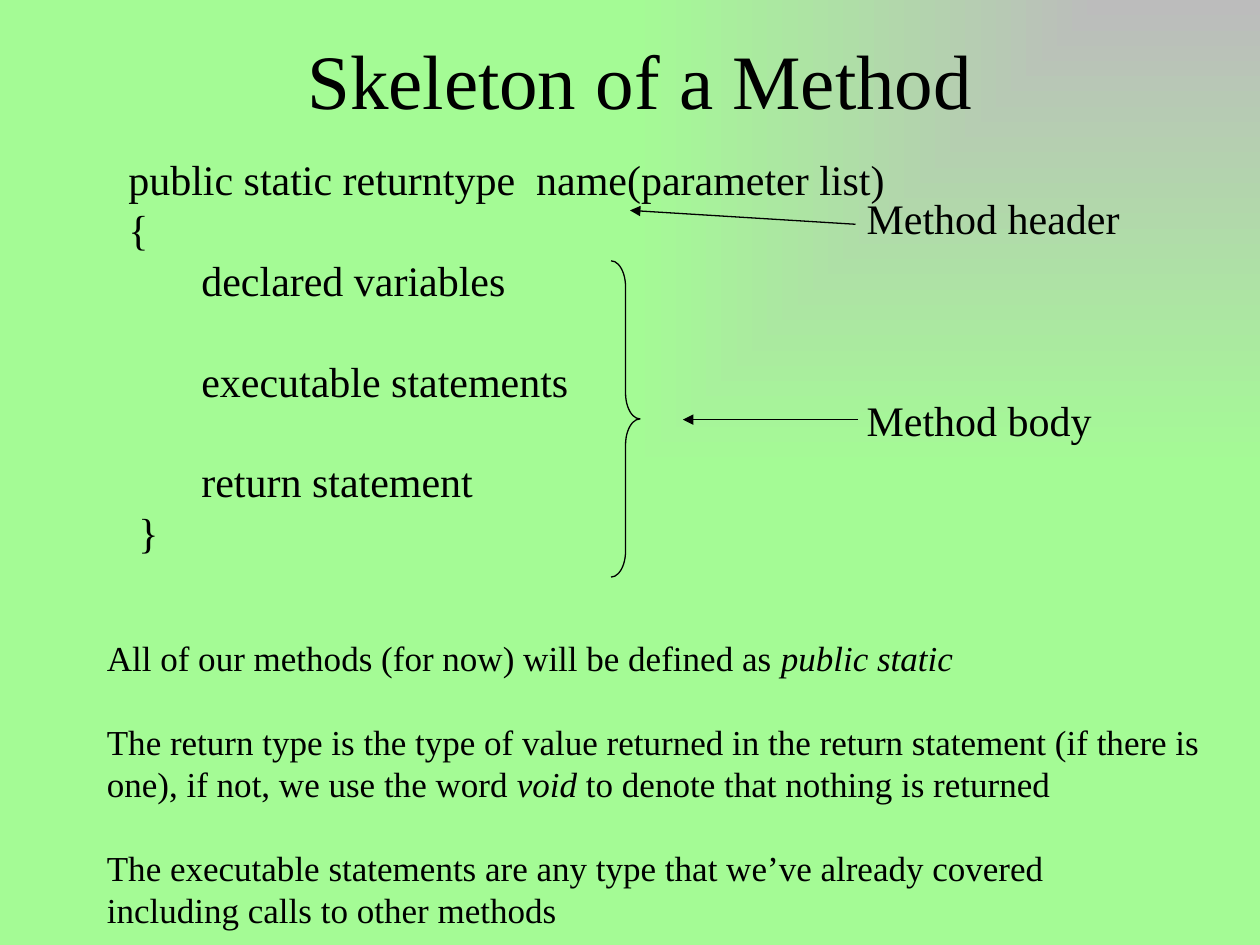
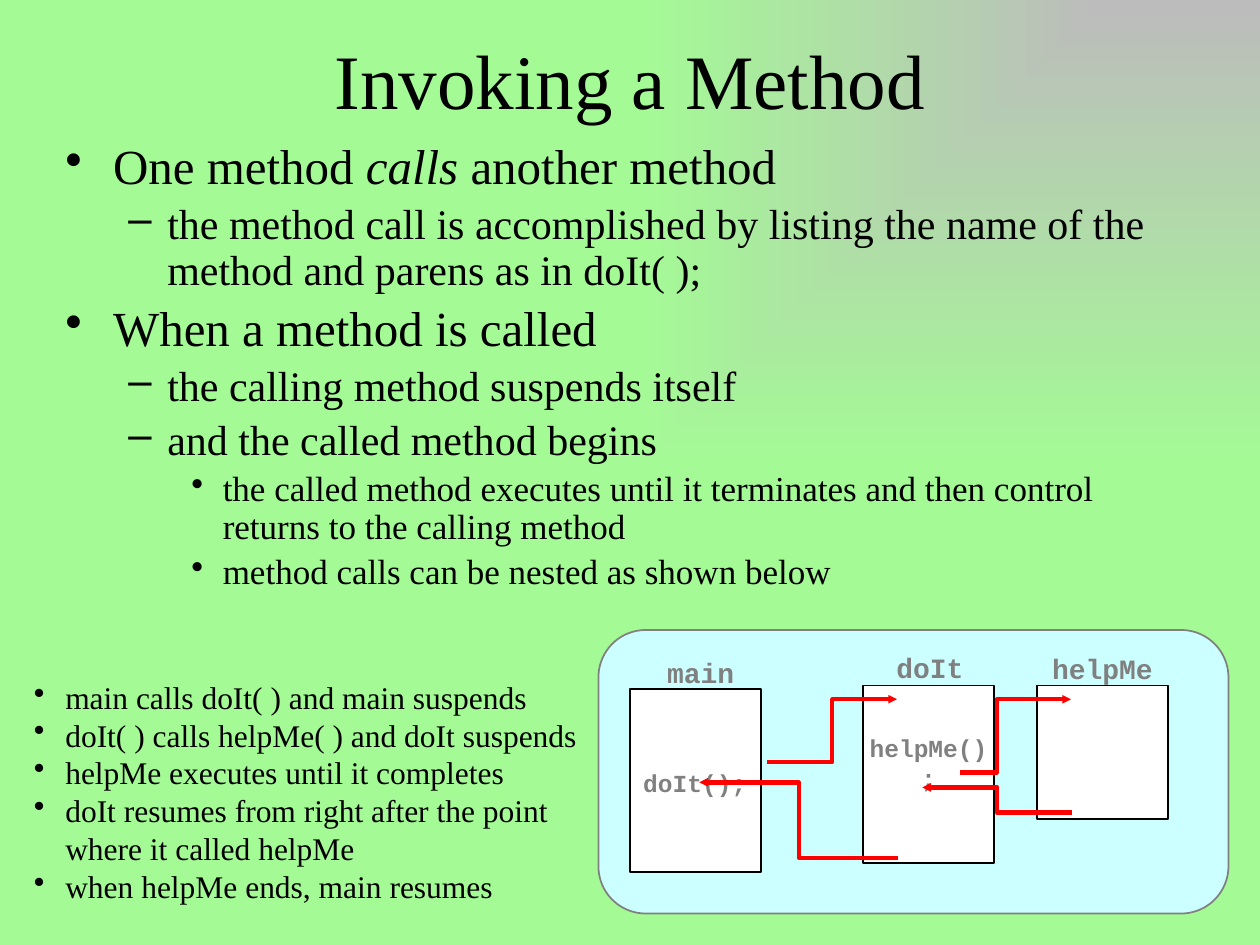
from dataclasses import dataclass

from pptx import Presentation
from pptx import util as u
from pptx.dml.color import RGBColor
from pptx.enum import shapes, text
from pptx.oxml import parse_xml
from pptx.oxml.ns import nsdecls, qn


@dataclass(frozen=True)
class Theme:
    glow: str = "BCBCBC"
    ground: str = "A4FB95"
    ink: str = "000000"
    gray: str = "808080"
    panel: str = "CCFFFF"
    paper: str = "FFFFFF"
    call: str = "FF0000"
    serif: str = "Times New Roman"
    mono: str = "Courier New"
    title: int = 44
    heading: int = 28
    body: int = 24
    note: int = 20
    step: int = 18
    label: int = 16
    code: int = 14
    line_height: float = 1.2


theme = Theme()
presentation = Presentation()
presentation.slide_width, presentation.slide_height = u.Inches(10), u.Inches(7.5)
cell = presentation.slide_width // 10  # the grid has 10 columns and 7.5 rows


def write(slide, box, lines, size=theme.body, font=theme.serif, color=theme.ink,
          bold=False, align=text.PP_ALIGN.LEFT, anchor=text.MSO_ANCHOR.TOP, wrap=True):
    """Add a text box; each line is a string or a dict of paragraph format.

    Words between asterisks are italic.
    """
    frame = slide.shapes.add_textbox(*[int(cell * length) for length in box]).text_frame
    frame.word_wrap, frame.vertical_anchor = wrap, anchor
    for number, line in enumerate(lines):
        line = line if isinstance(line, dict) else {"words": line}
        paragraph = frame.paragraphs[0] if number == 0 else frame.add_paragraph()
        paragraph.alignment = align
        paragraph.level = line.get("level", 0)
        paragraph.line_spacing = line.get("spacing", 1.0)
        paragraph.space_before = u.Pt(line.get("before", 0))
        properties = paragraph._p.get_or_add_pPr()
        properties.set("marL", str(int(cell * line.get("margin", 0))))
        properties.set("indent", str(-int(cell * line.get("hang", 0))))
        if "bullet" in line:
            properties.append(parse_xml(f'<a:buChar {nsdecls("a")} char="{line["bullet"]}"/>'))
        for part, words in enumerate(line["words"].split("*")):
            if not words:
                continue
            run = paragraph.add_run()
            run.text = words
            run.font.name, run.font.size = font, u.Pt(line.get("size", size))
            run.font.bold, run.font.italic = bold, part % 2 == 1
            run.font.color.rgb = RGBColor.from_string(color)


def draw_arrow(slide, start, end, kind, color, width, head="med", bend=None):
    points = [int(cell * length) for length in (*start, *end)]
    connector = slide.shapes.add_connector(kind, *points)
    connector.line.color.rgb = RGBColor.from_string(color)
    connector.line.width = u.Pt(width)
    connector.line._get_or_add_ln().append(parse_xml(
        f'<a:tailEnd {nsdecls("a")} type="triangle" w="{head}" len="{head}"/>'))
    properties = connector._element.spPr
    properties.append(parse_xml(f'<a:effectLst {nsdecls("a")}/>'))
    if bend is not None:
        guides = properties.find(qn("a:prstGeom")).get_or_add_avLst()
        guides.append(parse_xml(
            f'<a:gd {nsdecls("a")} name="adj1" fmla="val {round(bend * 100000)}"/>'))


# Shared background: a glow in the upper right corner
common = presentation.slide_master.element.find(qn("p:cSld"))
for background in common.findall(qn("p:bg")):
    common.remove(background)
common.insert(0, parse_xml(f"""
<p:bg {nsdecls("p", "a")}><p:bgPr><a:gradFill rotWithShape="0"><a:gsLst>
<a:gs pos="0"><a:srgbClr val="{theme.glow}"/></a:gs>
<a:gs pos="100000"><a:srgbClr val="{theme.ground}"/></a:gs></a:gsLst>
<a:path path="rect"><a:fillToRect l="100000" b="100000"/></a:path>
</a:gradFill><a:effectLst/></p:bgPr></p:bg>"""))

slides = []
for title, left in (("Skeleton of a Method", 0.83), ("Invoking a Method", 0.75)):
    slide = presentation.slides.add_slide(presentation.slide_layouts[6])
    write(slide, (left, 0, 8.5, 1.25), [title], size=theme.title,
          align=text.PP_ALIGN.CENTER, anchor=text.MSO_ANCHOR.MIDDLE)
    slides.append(slide)
skeleton, invoking = slides

# Slide 1: the parts of a method
body_line = theme.body * theme.line_height
note_line = theme.note * theme.line_height
write(skeleton, (0.67, 1.17, 6.7, 3.33), [
    {"words": "public static returntype  name(parameter list)", "margin": 0.25},
    {"words": "{", "margin": 0.25},
    {"words": "declared variables", "margin": 0.83},
    {"words": "executable statements", "margin": 0.83, "before": body_line},
    {"words": "return statement", "margin": 0.83, "before": body_line},
    {"words": "}", "margin": 0.33},
])
write(skeleton, (6.78, 1.48, 2.5, 2.1), [
    "Method header",
    {"words": "Method body", "before": 3 * body_line},
])
for start, end in (((6.79, 1.78), (5, 1.67)), ((6.81, 3.33), (5.42, 3.33))):
    draw_arrow(skeleton, start, end, shapes.MSO_CONNECTOR.STRAIGHT, theme.ink, 0.75)

brace = skeleton.shapes.add_shape(
    shapes.MSO_SHAPE.RIGHT_BRACE, *[int(cell * length) for length in (4.85, 2.07, 0.23, 2.51)])
brace.adjustments[0], brace.adjustments[1] = 0.9, 0.5
brace.shadow.inherit = False
brace.fill.background()
brace.line.color.rgb = RGBColor.from_string(theme.ink)
brace.line.width = u.Pt(0.75)

write(skeleton, (0.75, 5, 9, 2.46), [
    "All of our methods (for now) will be defined as *public static*",
    {"words": "The return type is the type of value returned in the return statement "
              "(if there is one), if not, we use the word *void* to denote that "
              "nothing is returned", "before": note_line},
    {"words": "The executable statements are any type that we’ve already covered",
     "before": note_line},
    "including calls to other methods",
], size=theme.note)

# Slide 2: outline of a call
levels = [
    {"size": theme.heading, "margin": 0.38, "hang": 0.38, "bullet": "•"},
    {"size": theme.body, "margin": 0.81, "hang": 0.31, "bullet": "–"},
    {"size": theme.note, "margin": 1.25, "hang": 0.25, "bullet": "•"},
]
outline = [
    (0, "One method *calls *another method"),
    (1, "the method call is accomplished by listing the name of the method "
        "and parens as in doIt( );"),
    (0, "When a method is called"),
    (1, "the calling method suspends itself"),
    (1, "and the called method begins"),
    (2, "the called method executes until it terminates and then control "
        "returns to the calling method"),
    (2, "method calls can be nested as shown below"),
]
write(invoking, (0.42, 1.08, 9.17, 2.58), [
    {**levels[level], "words": words, "level": level, "spacing": 0.9,
     "before": 0.2 * levels[level]["size"]}
    for level, words in outline
])

# Slide 2: panel with the three methods
frame_shape = shapes.MSO_SHAPE.RECTANGLE
panel_shape = shapes.MSO_SHAPE.FLOWCHART_ALTERNATE_PROCESS
for kind, box, fill, line in (
    (panel_shape, (4.75, 5, 5, 2.25), theme.panel, theme.gray),
    (frame_shape, (5, 5.47, 1.04, 1.45), theme.paper, theme.ink),
    (frame_shape, (6.85, 5.44, 1.04, 1.41), theme.paper, theme.ink),
    (frame_shape, (8.23, 5.44, 1.04, 1.06), theme.paper, theme.ink),
):
    block = invoking.shapes.add_shape(kind, *[int(cell * length) for length in box])
    block.shadow.inherit = False
    block.fill.solid()
    block.fill.fore_color.rgb = RGBColor.from_string(fill)
    block.line.color.rgb = RGBColor.from_string(line)
    block.line.width = u.Pt(1)

for words, box, size, wrap in (
    ("main", (5.19, 5.15, 0.74, 0.37), theme.label, False),
    ("doIt", (7.01, 5.11, 0.74, 0.37), theme.label, False),
    ("helpMe", (8.25, 5.12, 1, 0.37), theme.label, False),
    ("doIt();", (4.95, 6.05, 1.13, 0.33), theme.code, False),
    ("helpMe();", (6.77, 5.89, 1.2, 0.33), theme.code, True),
):
    write(invoking, box, [words], size=size, font=theme.mono, color=theme.gray, bold=True,
          align=text.PP_ALIGN.CENTER, anchor=text.MSO_ANCHOR.MIDDLE, wrap=wrap)

for start, end, bend in (
    ((7.13, 6.81), (5.55, 6.21), 0.5),
    ((6.09, 6.05), (7.12, 5.55), 0.5),
    ((7.62, 6.13), (8.5, 5.55), 0.33),
    ((8.51, 6.45), (7.32, 6.25), 0.5),
):
    draw_arrow(invoking, start, end, shapes.MSO_CONNECTOR.ELBOW, theme.call, 2.5,
               head="sm", bend=bend)

# Slide 2: the steps of the nested calls
step = {"margin": 0.25, "hang": 0.25, "bullet": "•"}
write(invoking, (0.17, 5.33, 4.67, 1.92), [
    {**step, "words": "main calls doIt( ) and main suspends"},
    {**step, "words": "doIt( ) calls helpMe( ) and doIt suspends"},
    {**step, "words": "helpMe executes until it completes"},
    {**step, "words": "doIt resumes from right after the point"},
    {"words": "where it called helpMe", "margin": 0.25},
    {**step, "words": "when helpMe ends, main resumes"},
], size=theme.step)

presentation.save("out.pptx")
